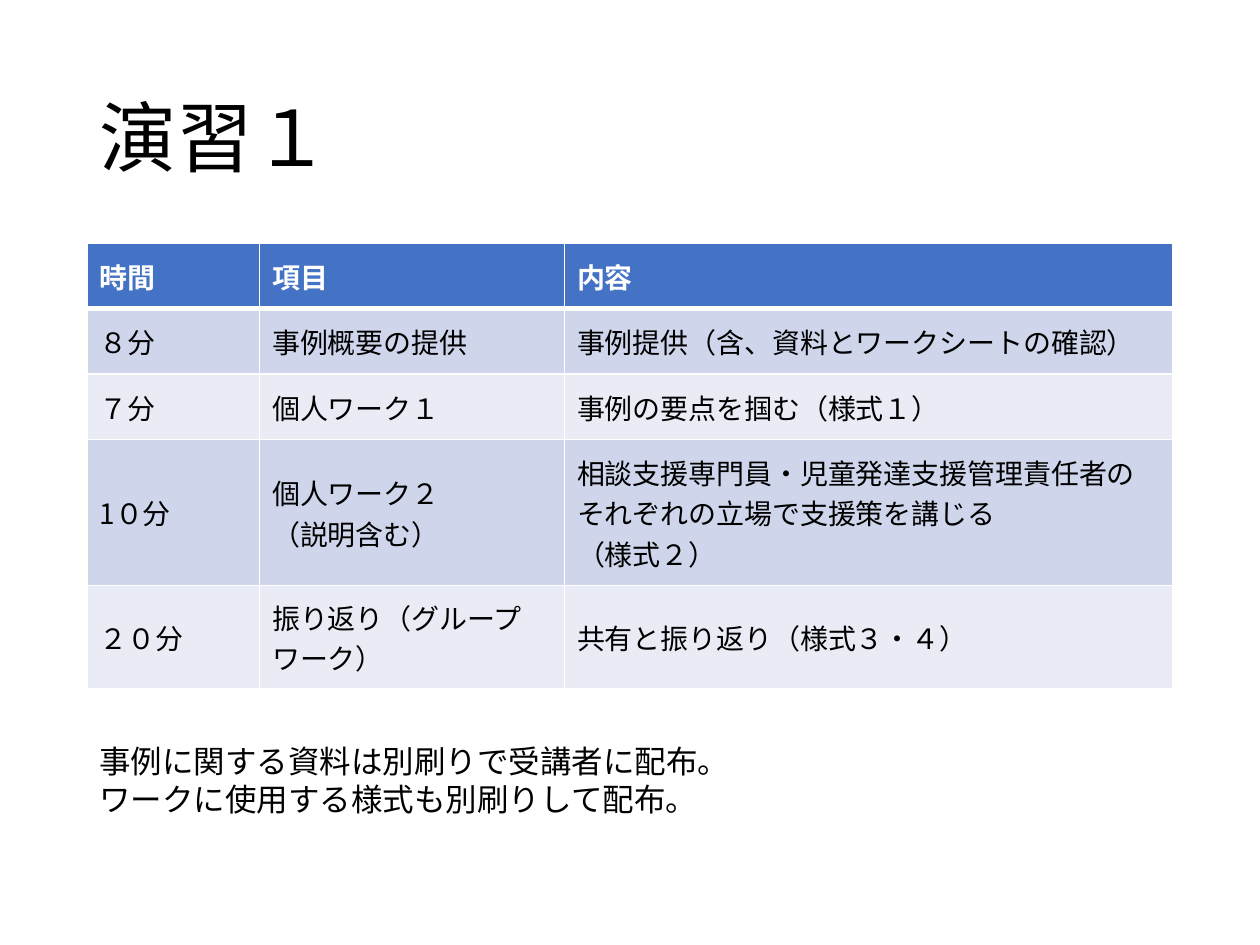
from lxml import etree
from pptx import Presentation, util as u
from pptx.dml.color import RGBColor
from pptx.enum import text
from pptx.oxml import ns

WIDTH, HEIGHT = u.Inches(10), u.Inches(7.5)
MARGIN, CONTENT_WIDTH = u.Inches(0.69), u.Inches(8.62)
BLACK = RGBColor(0, 0, 0)
WHITE = RGBColor(0xFF, 0xFF, 0xFF)
HEADER_FILL = RGBColor(0x44, 0x72, 0xC4)
BAND_FILLS = (RGBColor(0xCF, 0xD5, 0xEA), RGBColor(0xE9, 0xEB, 0xF5))
CJK = "Noto Sans CJK JP"

COLUMN_WIDTHS = (1.37, 2.42, 4.83)
ROW_HEIGHTS = (0.52, 0.52, 0.52, 1.16, 0.82)
SCHEDULE = (
    ("時間", "項目", "内容"),
    ("８分", "事例概要の提供", "事例提供（含、資料とワークシートの確認）"),
    ("７分", "個人ワーク１", "事例の要点を掴む（様式１）"),
    ("1０分", "個人ワーク２\n（説明含む）",
     "相談支援専門員・児童発達支援管理責任者のそれぞれの立場で支援策を講じる\n（様式２）"),
    ("２０分", "振り返り（グループワーク）", "共有と振り返り（様式３・４）"),
)
NOTES = "事例に関する資料は別刷りで受講者に配布。\nワークに使用する様式も別刷りして配布。"


def write_text(frame, words, color=BLACK, line_spacing=None, **font_format):
    """Write one paragraph per line, in one format for Latin and East Asian text."""
    frame.text = words
    for paragraph in frame.paragraphs:
        if line_spacing:
            paragraph.line_spacing = line_spacing
        for run in paragraph.runs:
            for name, value in font_format.items():
                setattr(run.font, name, value)
            run.font.color.rgb = color
            east_asian = etree.SubElement(run.font._element, ns.qn("a:ea"))
            east_asian.set("typeface", font_format["name"])


def add_text(slide, box, words, anchor, **text_format):
    frame = slide.shapes.add_textbox(*box).text_frame
    frame.word_wrap = True
    frame.vertical_anchor = anchor
    write_text(frame, words, **text_format)
    return frame


def set_borders(cell, widths):
    properties = cell._tc.get_or_add_tcPr()
    for side, points in widths.items():
        line = etree.SubElement(properties, ns.qn(f"a:ln{side}"), w=str(u.Pt(points)))
        fill = etree.SubElement(line, ns.qn("a:solidFill"))
        etree.SubElement(fill, ns.qn("a:srgbClr"), val=str(WHITE))


def add_schedule(slide, box):
    table = slide.shapes.add_table(len(SCHEDULE), len(COLUMN_WIDTHS), *box).table
    for column, width in zip(table.columns, COLUMN_WIDTHS):
        column.width = u.Inches(width)
    for index, (row, height, entries) in enumerate(zip(table.rows, ROW_HEIGHTS, SCHEDULE)):
        row.height = u.Inches(height)
        header = index == 0
        borders = {"L": 1, "R": 1, "T": 3 if index == 1 else 1, "B": 3 if header else 1}
        for cell, words in zip(row.cells, entries):
            set_borders(cell, borders)
            cell.fill.solid()
            cell.fill.fore_color.rgb = HEADER_FILL if header else BAND_FILLS[(index - 1) % 2]
            cell.vertical_anchor = text.MSO_ANCHOR.MIDDLE
            write_text(cell.text_frame, words, WHITE if header else BLACK,
                       name=CJK, size=u.Pt(16), bold=header)


def build_exercise_slide(presentation):
    slide = presentation.slides.add_slide(presentation.slide_layouts[6])
    add_text(slide, (MARGIN, u.Inches(0.4), CONTENT_WIDTH, u.Inches(1.45)), "演習１",
             text.MSO_ANCHOR.MIDDLE, line_spacing=0.9, name=CJK, size=u.Pt(44))
    add_schedule(slide, (MARGIN, u.Inches(1.93), CONTENT_WIDTH, u.Inches(sum(ROW_HEIGHTS))))
    notes = add_text(slide, (MARGIN, u.Inches(5.84), CONTENT_WIDTH, u.Inches(0.71)), NOTES,
                     text.MSO_ANCHOR.TOP, name="Calibri", size=u.Pt(18))
    notes.auto_size = text.MSO_AUTO_SIZE.SHAPE_TO_FIT_TEXT


def main():
    presentation = Presentation()
    presentation.slide_width, presentation.slide_height = WIDTH, HEIGHT
    build_exercise_slide(presentation)
    presentation.save("out.pptx")


if __name__ == "__main__":
    main()
